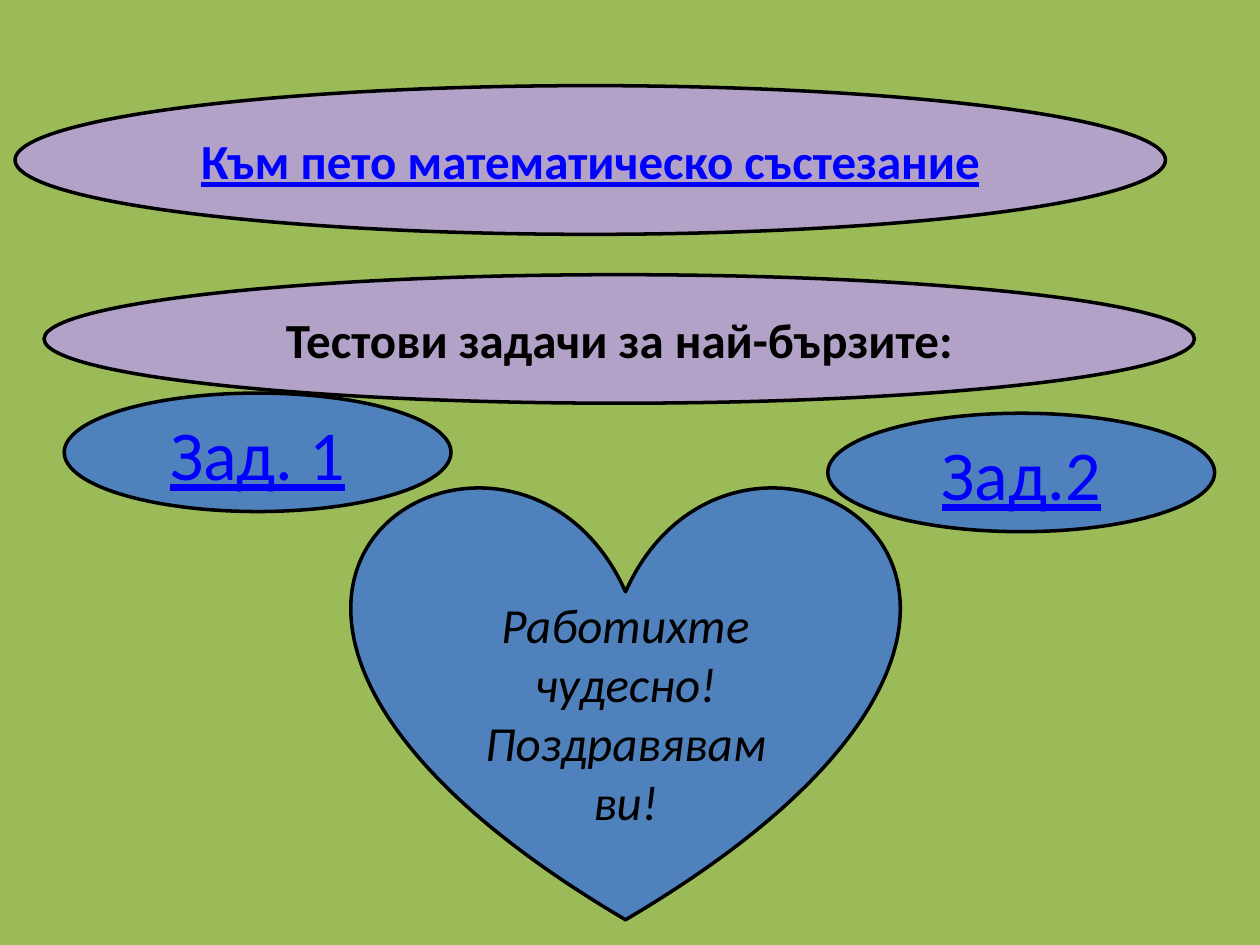
import pptx
import pptx.dml.color
import pptx.enum.shapes
import pptx.enum.text
import pptx.util

Inches, Pt = pptx.util.Inches, pptx.util.Pt
Shape = pptx.enum.shapes.MSO_SHAPE

COLORS = {
    "background": "9BBB59",
    "banner": "B3A2C7",
    "task": "4F81BD",
    "outline": "000000",
    "text": "000000",
    "link": "0000FF",
}


def color(name):
    return pptx.dml.color.RGBColor.from_string(COLORS[name])


class Board:
    """Holds the deck style and the current slide."""

    font_name = "Calibri"
    outline_width = Pt(2)

    def __init__(self, page):
        self.page = page
        page.background.fill.solid()
        page.background.fill.fore_color.rgb = color("background")

    def figure(self, kind, left, top, width, height, fill, text, size,
               ink="text", bold=False, italic=False, underline=False):
        shape = self.page.shapes.add_shape(
            kind, Inches(left), Inches(top), Inches(width), Inches(height))
        shape.shadow.inherit = False
        shape.fill.solid()
        shape.fill.fore_color.rgb = color(fill)
        shape.line.color.rgb = color("outline")
        shape.line.width = self.outline_width

        frame = shape.text_frame
        frame.word_wrap = True
        frame.vertical_anchor = pptx.enum.text.MSO_ANCHOR.MIDDLE
        para = frame.paragraphs[0]
        para.text = text
        para.alignment = pptx.enum.text.PP_ALIGN.CENTER
        font = para.font
        font.name, font.size = self.font_name, Pt(size)
        font.bold, font.italic, font.underline = bold, italic, underline
        font.color.rgb = color(ink)
        # Underlining follows the run, so it is set there as well.
        para.runs[0].font.underline = underline
        para.runs[0].font.color.rgb = color(ink)
        return shape

    def banner(self, left, top, height, text, **style):
        return self.figure(Shape.OVAL, left, top, 9.13, height, "banner",
                           text, 28, bold=True, **style)

    def task(self, left, top, text):
        return self.figure(Shape.OVAL, left, top, 3.07, 0.94, "task",
                           text, 40, ink="link", underline=True)

    def heart(self, left, top, width, height, text):
        shape = self.figure(Shape.HEART, left, top, width, height, "task",
                            text, 28, italic=True)
        # Lowers the text below the notch of the heart.
        shape.text_frame.margin_top = Inches(0.52)
        return shape


def main():
    deck = pptx.Presentation()
    deck.slide_width, deck.slide_height = Inches(10), Inches(7.5)
    board = Board(deck.slides.add_slide(deck.slide_layouts[6]))

    board.banner(0.12, 0.68, 1.18, "Към пето математическо състезание",
                 ink="link", underline=True)
    board.banner(0.35, 2.18, 1.02, "Тестови задачи за най-бързите:")
    board.task(0.51, 3.12, "Зад. 1")
    board.task(6.57, 3.28, "Зад.2")
    board.heart(2.8, 3.83, 4.33, 3.47, "Работихте чудесно! Поздравявам ви!")

    deck.save("out.pptx")


if __name__ == "__main__":
    main()
